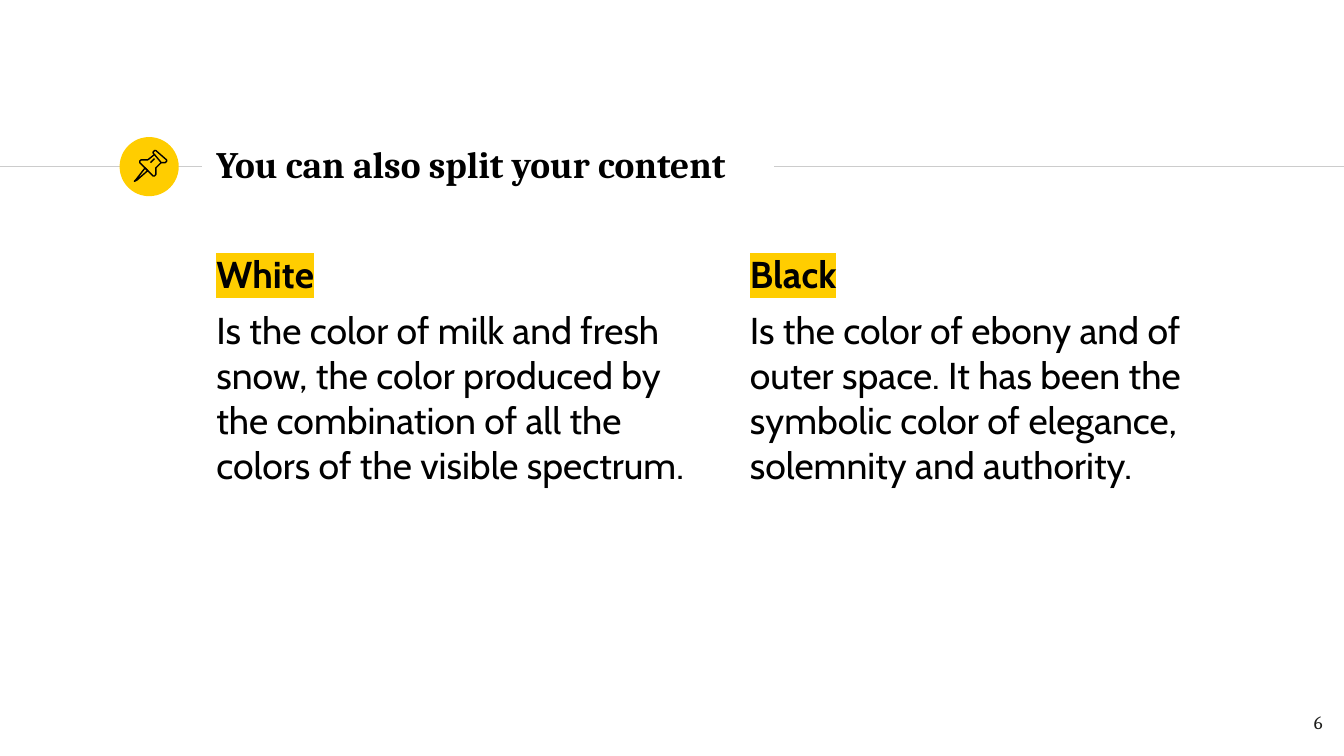
from lxml.etree import SubElement
from pptx import Presentation
from pptx.dml.color import RGBColor
from pptx.enum.shapes import MSO_CONNECTOR, MSO_SHAPE
from pptx.enum.text import MSO_ANCHOR, MSO_AUTO_SIZE, PP_ALIGN
from pptx.oxml import parse_xml
from pptx.oxml.ns import nsdecls, qn
from pptx.util import Inches, Pt

COLORS = {
    "accent": "FFCD00",
    "rule": "CCCCCC",
    "text": "000000",
    "number": "1D1D1B",
}
HEADING_FONT = "Cambria"
BODY_FONT = "Cabin"

# Pushpin outlines in hundredths of an inch from the badge's corner: points, closed
PUSHPIN = [
    ([(19, 23), (12, 32), (11, 33), (13, 32), (21, 25)], True),
    ([(26, 13), (31, 19), (32, 19), (34, 19), (35, 18), (35, 17),
      (27, 10), (26, 10), (25, 11), (25, 12)], True),
    ([(26, 13), (21, 17), (18, 17), (16, 17), (15, 18), (15, 19), (25, 29),
      (26, 29), (27, 28), (27, 26), (27, 23), (31, 19)], False),
    ([(23, 19), (26, 16)], False),
]

COLUMNS = [
    ("White", "Is the color of milk and fresh snow, the color produced by "
              "the combination of all the colors of the visible spectrum."),
    ("Black", "Is the color of ebony and of outer space. It has been the "
              "symbolic color of elegance, solemnity and authority."),
]


def color(name):
    return RGBColor.from_string(COLORS[name])


def place(shape, left, top, width, height):
    shape.left, shape.top = Inches(left), Inches(top)
    shape.width, shape.height = Inches(width), Inches(height)


def prepare_frame(shape, anchor=MSO_ANCHOR.TOP):
    frame = shape.text_frame
    frame.word_wrap = True
    frame.auto_size = MSO_AUTO_SIZE.NONE
    frame.vertical_anchor = anchor
    frame.margin_left = frame.margin_right = Inches(0.1)
    frame.margin_top = frame.margin_bottom = Inches(0.1)
    return frame


def write(paragraph, text, font=BODY_FONT, size=20, fill="text", bold=False,
          highlight=None, align=PP_ALIGN.LEFT, space_before=0):
    """Write text as one unbulleted run with the given format."""
    paragraph.alignment = align
    paragraph.space_before = Pt(space_before)
    properties = paragraph._p.get_or_add_pPr()
    properties.set("marL", "0")
    properties.set("indent", "0")
    SubElement(properties, qn("a:buNone"))
    run = paragraph.add_run()
    run.text = text
    run.font.name = font
    run.font.size = Pt(size)
    run.font.bold = bold
    run.font.color.rgb = color(fill)
    if highlight:
        run.font._element.find(qn("a:solidFill")).addnext(parse_xml(
            f'<a:highlight {nsdecls("a")}>'
            f'<a:srgbClr val="{COLORS[highlight]}"/></a:highlight>'))


def add_rule(slide, start, end, top):
    rule = slide.shapes.add_connector(
        MSO_CONNECTOR.STRAIGHT, Inches(start), Inches(top), Inches(end), Inches(top))
    rule.line.color.rgb = color("rule")
    rule.line.width = Pt(0.75)
    SubElement(rule._element.spPr, qn("a:effectLst"))


def add_badge(slide, left, top, size):
    circle = slide.shapes.add_shape(
        MSO_SHAPE.OVAL, Inches(left), Inches(top), Inches(size), Inches(size))
    circle.shadow.inherit = False
    circle.fill.solid()
    circle.fill.fore_color.rgb = color("accent")
    circle.line.fill.background()
    for points, closed in PUSHPIN:
        builder = slide.shapes.build_freeform(*points[0], scale=Inches(0.01))
        builder.add_line_segments(points[1:], close=closed)
        outline = builder.convert_to_shape(Inches(left), Inches(top))
        outline.shadow.inherit = False
        outline.fill.background()
        outline.line.color.rgb = color("text")
        outline.line.width = Pt(0.75)


def add_heading(slide, text, left, top, width, height):
    """Place the title between two rules, with the badge on the left one."""
    middle = top + 0.26
    add_rule(slide, 0, left - 0.01, middle)
    add_rule(slide, left + width + 0.01, 10, middle)
    add_badge(slide, left - 0.62, middle - 0.22, 0.44)
    title = slide.shapes.title
    place(title, left, top, width, height)
    frame = prepare_frame(title, MSO_ANCHOR.MIDDLE)
    write(frame.paragraphs[0], text, font=HEADING_FONT, bold=True)


def fill_column(placeholder, heading, text, left, top, width, height):
    place(placeholder, left, top, width, height)
    frame = prepare_frame(placeholder)
    write(frame.paragraphs[0], heading, bold=True, highlight="accent", space_before=6)
    write(frame.add_paragraph(), text, space_before=6)


def add_slide_number(slide, number, left, top, width, height):
    box = slide.shapes.add_textbox(
        Inches(left), Inches(top), Inches(width), Inches(height))
    write(prepare_frame(box).paragraphs[0], number, font=HEADING_FONT, size=10,
          fill="number", align=PP_ALIGN.RIGHT)


def main():
    presentation = Presentation()
    presentation.slide_width = Inches(10)
    presentation.slide_height = presentation.slide_width * 9 // 16
    slide = presentation.slides.add_slide(
        presentation.slide_layouts.get_by_name("Two Content"))
    add_heading(slide, "You can also split your content", 1.51, 0.98, 4.24, 0.48)
    for index, (heading, text) in enumerate(COLUMNS):
        fill_column(slide.placeholders[index + 1], heading, text,
                    1.51 + 3.97 * index, 1.77, 3.75, 3.53)
    add_slide_number(slide, "6", 9.34, 5.19, 0.6, 0.43)
    presentation.save("out.pptx")


if __name__ == "__main__":
    main()
